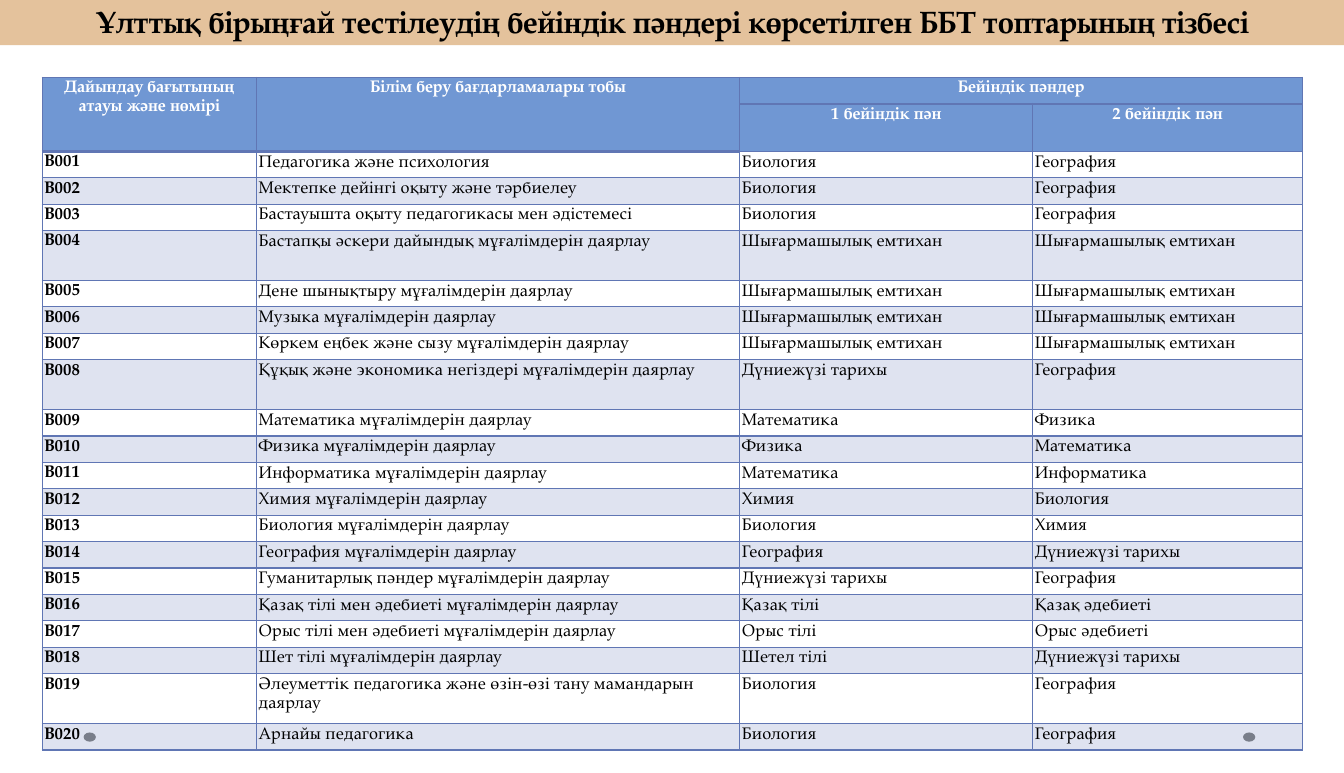
"""Build the slide listing programme groups with their two profile subjects."""
from dataclasses import dataclass

from lxml.etree import SubElement
from pptx import Presentation
from pptx.dml.color import RGBColor
from pptx.enum.shapes import MSO_SHAPE as Preset
from pptx.enum.text import MSO_AUTO_SIZE as AutoSize, PP_ALIGN as Align
from pptx.oxml import parse_xml
from pptx.oxml.ns import nsdecls, qn
from pptx.util import Pt

FONT = "TeX Gyre Pagella"
BLACK, WHITE, GRAY = "000000", "FFFFFF", "808080"
SAND, HEADER_BLUE, GRID_BLUE = "E4C29C", "7097D3", "6076B4"
COLUMN_WIDTHS = (153.3, 345.6, 209.5, 193)
LINE_ROW, HEADER_ROW, TALL_ROW = 18.88, 34, 35.8
HEADER_ROWS = 2
TALL_GROUPS = {4, 8, 19}


@dataclass(frozen=True)
class Group:
    title: str
    first: str
    second: str


@dataclass(frozen=True)
class Heading:
    text: str
    row: int
    column: int
    last_row: int
    last_column: int


@dataclass(frozen=True)
class Block:
    preset: Preset
    left: float
    top: float
    width: float
    height: float
    color: str


HEADINGS = (
    Heading("Дайындау бағытының атауы және нөмірі", 0, 0, 1, 0),
    Heading("Білім беру бағдарламалары тобы", 0, 1, 1, 1),
    Heading("Бейіндік пәндер", 0, 2, 0, 3),
    Heading("1 бейіндік пән", 1, 2, 1, 2),
    Heading("2 бейіндік пән", 1, 3, 1, 3),
)
CREATIVE = "Шығармашылық емтихан"
WORLD_HISTORY = "Дүниежүзі тарихы"
GROUPS = (
    Group("Педагогика және психология", "Биология", "География"),
    Group("Мектепке дейінгі оқыту және тәрбиелеу", "Биология", "География"),
    Group("Бастауышта оқыту педагогикасы мен әдістемесі", "Биология", "География"),
    Group("Бастапқы әскери дайындық мұғалімдерін даярлау", CREATIVE, CREATIVE),
    Group("Дене шынықтыру мұғалімдерін даярлау", CREATIVE, CREATIVE),
    Group("Музыка мұғалімдерін даярлау", CREATIVE, CREATIVE),
    Group("Көркем еңбек және сызу мұғалімдерін даярлау", CREATIVE, CREATIVE),
    Group("Құқық және экономика негіздері мұғалімдерін даярлау", WORLD_HISTORY, "География"),
    Group("Математика мұғалімдерін даярлау", "Математика", "Физика"),
    Group("Физика мұғалімдерін даярлау", "Физика", "Математика"),
    Group("Информатика мұғалімдерін даярлау", "Математика", "Информатика"),
    Group("Химия мұғалімдерін даярлау", "Химия", "Биология"),
    Group("Биология мұғалімдерін даярлау", "Биология", "Химия"),
    Group("География мұғалімдерін даярлау", "География", WORLD_HISTORY),
    Group("Гуманитарлық пәндер мұғалімдерін даярлау", WORLD_HISTORY, "География"),
    Group("Қазақ тілі мен әдебиеті мұғалімдерін даярлау", "Қазақ тілі", "Қазақ әдебиеті"),
    Group("Орыс тілі мен әдебиеті мұғалімдерін даярлау", "Орыс тілі", "Орыс әдебиеті"),
    Group("Шет тілі мұғалімдерін даярлау", "Шетел тілі", WORLD_HISTORY),
    Group("Әлеуметтік педагогика және өзін-өзі тану мамандарын даярлау", "Биология", "География"),
    Group("Арнайы педагогика", "Биология", "География"),
)
FOOTER_DOTS = tuple(Block(Preset.OVAL, left, 524, 8.8, 6.6, GRAY) for left in (889, 59.8))
TITLE_BAND = Block(Preset.RECTANGLE, 0, -1.4, 962.6, 33.8, SAND)


def paint(fill, color: str) -> None:
    fill.solid()
    fill.fore_color.rgb = RGBColor.from_string(color)


def write(frame, text: str, *, size: float = 12, color: str = BLACK, bold: bool = False,
          align: Align = Align.LEFT, line_spacing: float = 1.15, tracking: float = 0.1) -> None:
    paragraph = frame.paragraphs[0]
    paragraph.alignment = align
    paragraph.line_spacing = line_spacing
    run = paragraph.add_run()
    run.text = text
    run.font.name, run.font.size, run.font.bold = FONT, Pt(size), bold
    paint(run.font.fill, color)
    if tracking:
        run._r.get_or_add_rPr().set("spc", str(round(tracking * 100)))


def draw_block(slide, block: Block):
    shape = slide.shapes.add_shape(block.preset, Pt(block.left), Pt(block.top),
                                   Pt(block.width), Pt(block.height))
    shape.shadow.inherit = False
    paint(shape.fill, block.color)
    shape.line.fill.background()
    return shape


def style_cell(cell, row: int) -> None:
    cell.margin_left = cell.margin_right = Pt(1.5)
    cell.margin_top = cell.margin_bottom = Pt(0.7)
    properties = cell._tc.get_or_add_tcPr()
    if row < HEADER_ROWS:
        paint(cell.fill, HEADER_BLUE)
    elif row % 2:
        paint(cell.fill, GRID_BLUE)
        SubElement(properties.find(".//" + qn("a:srgbClr")), qn("a:alpha"), val="20000")
    else:
        cell.fill.background()
    for position, side in enumerate("LRTB"):
        weight = 2 if row == 0 and side == "B" else 1
        properties.insert(position, parse_xml(
            f'<a:ln{side} {nsdecls("a")} w="{Pt(weight)}"><a:solidFill>'
            f'<a:srgbClr val="{GRID_BLUE}"/></a:solidFill></a:ln{side}>'))


def draw_subjects(slide) -> None:
    heights = [LINE_ROW, HEADER_ROW] + [
        TALL_ROW if number in TALL_GROUPS else LINE_ROW for number in range(1, len(GROUPS) + 1)]
    subjects = slide.shapes.add_table(len(heights), len(COLUMN_WIDTHS), Pt(30.2), Pt(55.4),
                                      Pt(sum(COLUMN_WIDTHS)), Pt(sum(heights))).table
    subjects.first_row = subjects.horz_banding = False
    for column, width in zip(subjects.columns, COLUMN_WIDTHS):
        column.width = Pt(width)
    for index, (row, height) in enumerate(zip(subjects.rows, heights)):
        row.height = Pt(height)
        for cell in row.cells:
            style_cell(cell, index)
    for heading in HEADINGS:
        cell = subjects.cell(heading.row, heading.column)
        last = subjects.cell(heading.last_row, heading.last_column)
        if (heading.row, heading.column) != (heading.last_row, heading.last_column):
            cell.merge(last)
        write(cell.text_frame, heading.text, color=WHITE, bold=True, align=Align.CENTER)
    for number, group in enumerate(GROUPS, 1):
        entries = (f"В{number:03}", group.title, group.first, group.second)
        for column, entry in enumerate(entries):
            cell = subjects.cell(number + HEADER_ROWS - 1, column)
            write(cell.text_frame, entry, bold=column == 0)


def main() -> None:
    deck = Presentation()
    deck.slide_width, deck.slide_height = Pt(961.2), Pt(553)
    slide = deck.slides.add_slide(deck.slide_layouts[6])
    for dot in FOOTER_DOTS:
        draw_block(slide, dot)
    draw_subjects(slide)
    title = draw_block(slide, TITLE_BAND).text_frame
    title.word_wrap = True
    title.auto_size = AutoSize.SHAPE_TO_FIT_TEXT
    write(title, "Ұлттық бірыңғай тестілеудің бейіндік пәндері көрсетілген ББТ топтарының тізбесі",
          size=22, bold=True, align=Align.CENTER, line_spacing=1.0, tracking=0)
    deck.save("out.pptx")


if __name__ == "__main__":
    main()
